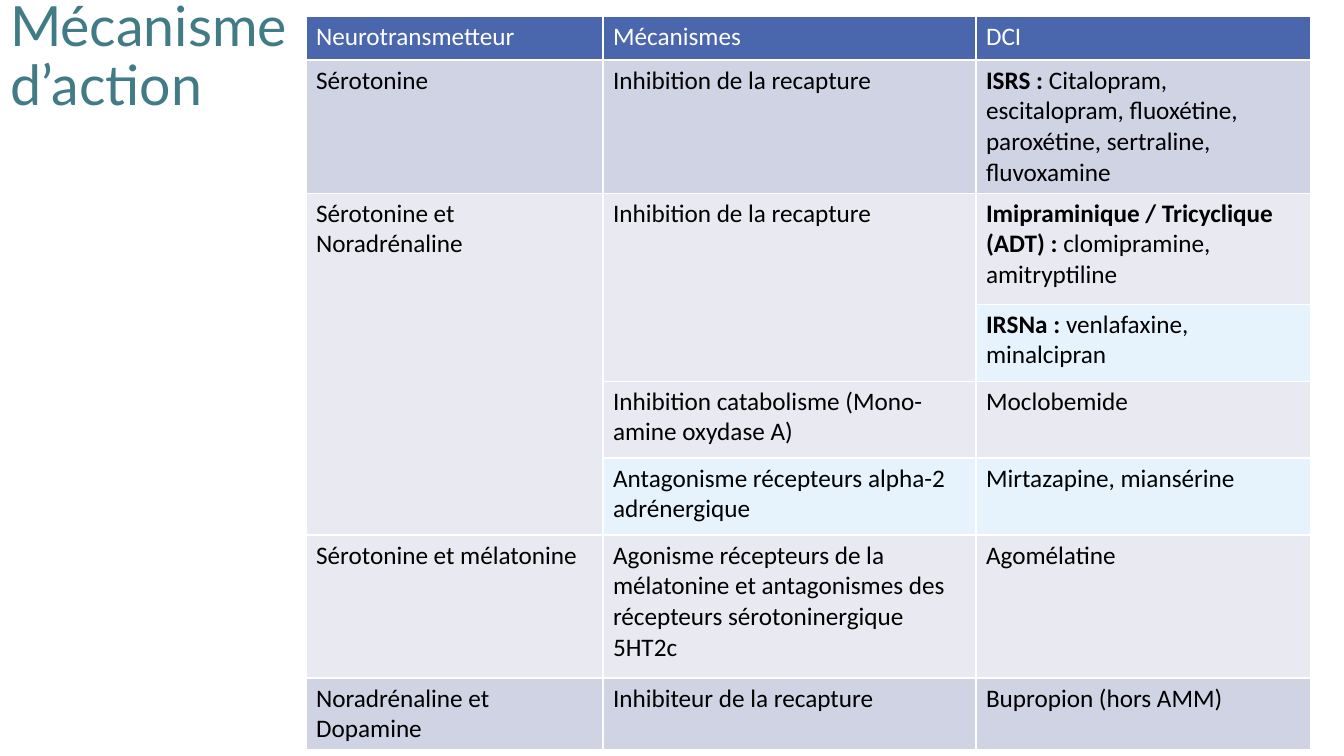
from lxml.etree import SubElement
from pptx import Presentation
from pptx.dml.color import RGBColor
from pptx.enum.text import MSO_ANCHOR, MSO_AUTO_SIZE, PP_ALIGN
from pptx.oxml.ns import qn
from pptx.util import Pt

PX = 12192000 / 1344
COLORS = {
    "title": "417B85",
    "header": "4A66AC",
    "dark": "D0D3E3",
    "light": "E9EAF1",
    "sky": "E7F3FC",
    "white": "FFFFFF",
    "black": "000000",
}
COLUMNS = [297, 373, 335]
ROWS = [
    (44, "header", ["Neurotransmetteur", "Mécanismes", "DCI"]),
    (111, "dark", ["Sérotonine", "Inhibition de la recapture",
                   ("ISRS : ", "Citalopram, escitalopram, fluoxétine, "
                               "paroxétine, sertraline, fluvoxamine")]),
    (111, "light", ["Sérotonine et Noradrénaline", "Inhibition de la recapture",
                    ("Imipraminique / Tricyclique (ADT) : ",
                     "clomipramine, amitryptiline")]),
    (77, "sky", [None, None, ("IRSNa : ", "venlafaxine, minalcipran")]),
    (77, "light", [None, "Inhibition catabolisme (Mono-amine oxydase A)",
                   "Moclobemide"]),
    (77, "sky", [None, "Antagonisme récepteurs alpha-2 adrénergique",
                 "Mirtazapine, miansérine"]),
    (143, "light", ["Sérotonine et mélatonine",
                    "Agonisme récepteurs de la mélatonine et antagonismes "
                    "des récepteurs sérotoninergique 5HT2c",
                    "Agomélatine"]),
    (44, "dark", ["Noradrénaline et Dopamine", "Inhibiteur de la recapture",
                  "Bupropion (hors AMM)"]),
]
MERGES = [((2, 0), (5, 0)), ((2, 1), (3, 1))]


def px(n):
    return round(n * PX)


def rgb(name):
    return RGBColor.from_string(COLORS[name])


class Deck:
    def __init__(self, title_font, body_font):
        self.title_font = title_font
        self.body_font = body_font
        self.prs = Presentation()
        self.prs.slide_width, self.prs.slide_height = px(1344), px(756)
        self.s = self.prs.slides.add_slide(self.prs.slide_layouts[5])

    def run(self, p, text, font, size, color, bold=False):
        r = p.add_run()
        r.text = text
        r.font.name = font
        r.font.size = Pt(size)
        r.font.bold = bold
        r.font.color.rgb = rgb(color)

    def title(self, text, x, y, w, h):
        sp = self.s.shapes.title
        sp.left, sp.top, sp.width, sp.height = map(px, (x, y, w, h))
        tf = sp.text_frame
        tf.word_wrap = True
        tf.auto_size = MSO_AUTO_SIZE.NONE
        tf.vertical_anchor = MSO_ANCHOR.MIDDLE
        p = tf.paragraphs[0]
        p.alignment = PP_ALIGN.LEFT
        p.line_spacing = 0.9
        self.run(p, text, self.title_font, 39.6, "title")

    def borders(self, cell, color, width):
        tc_pr = cell._tc.get_or_add_tcPr()
        for side in ("a:lnL", "a:lnR", "a:lnT", "a:lnB"):
            ln = SubElement(tc_pr, qn(side), w=str(Pt(width)))
            fill = SubElement(ln, qn("a:solidFill"))
            SubElement(fill, qn("a:srgbClr"), val=COLORS[color])

    def cell(self, cell, content, fill):
        self.borders(cell, "white", 1)
        cell.fill.solid()
        cell.fill.fore_color.rgb = rgb(fill)
        if content is None:
            return
        color = "white" if fill == "header" else "black"
        lead, text = content if isinstance(content, tuple) else ("", content)
        p = cell.text_frame.paragraphs[0]
        if lead:
            self.run(p, lead, self.body_font, 18, color, True)
        self.run(p, text, self.body_font, 18, color)

    def table(self, x, y, columns, rows, merges):
        height = sum(row[0] for row in rows)
        frame = self.s.shapes.add_table(
            len(rows), len(columns), px(x), px(y), px(sum(columns)), px(height))
        table = frame.table
        for column, width in zip(table.columns, columns):
            column.width = px(width)
        for i, (row_height, fill, contents) in enumerate(rows):
            table.rows[i].height = px(row_height)
            for j, content in enumerate(contents):
                self.cell(table.cell(i, j), content, fill)
        for start, end in merges:
            table.cell(*start).merge(table.cell(*end))


def main():
    deck = Deck("Lato", "Calibri")
    deck.title("Mécanisme d’action", 0, 2, 325, 112)
    deck.table(306, 16, COLUMNS, ROWS, MERGES)
    deck.prs.save("out.pptx")


if __name__ == "__main__":
    main()
